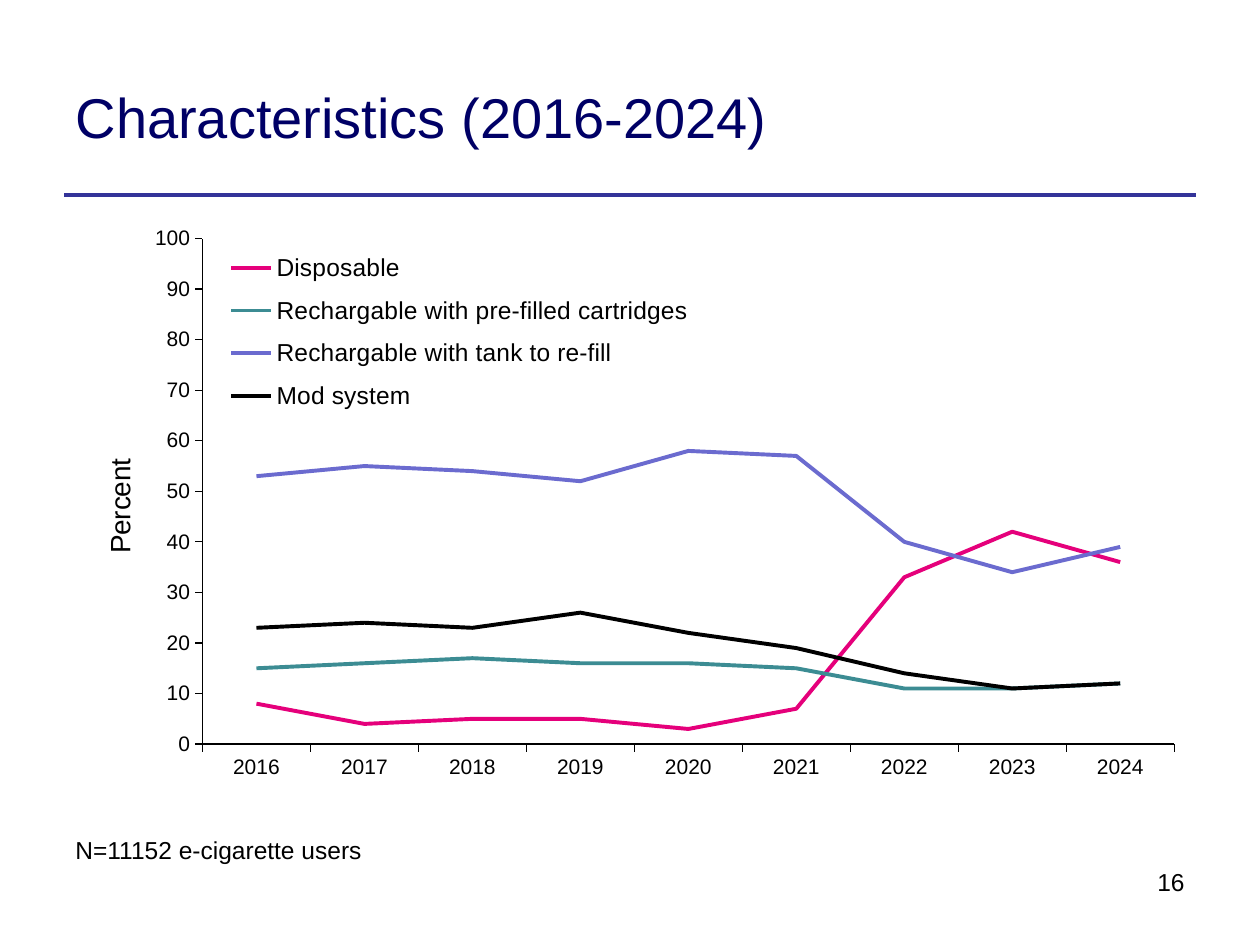
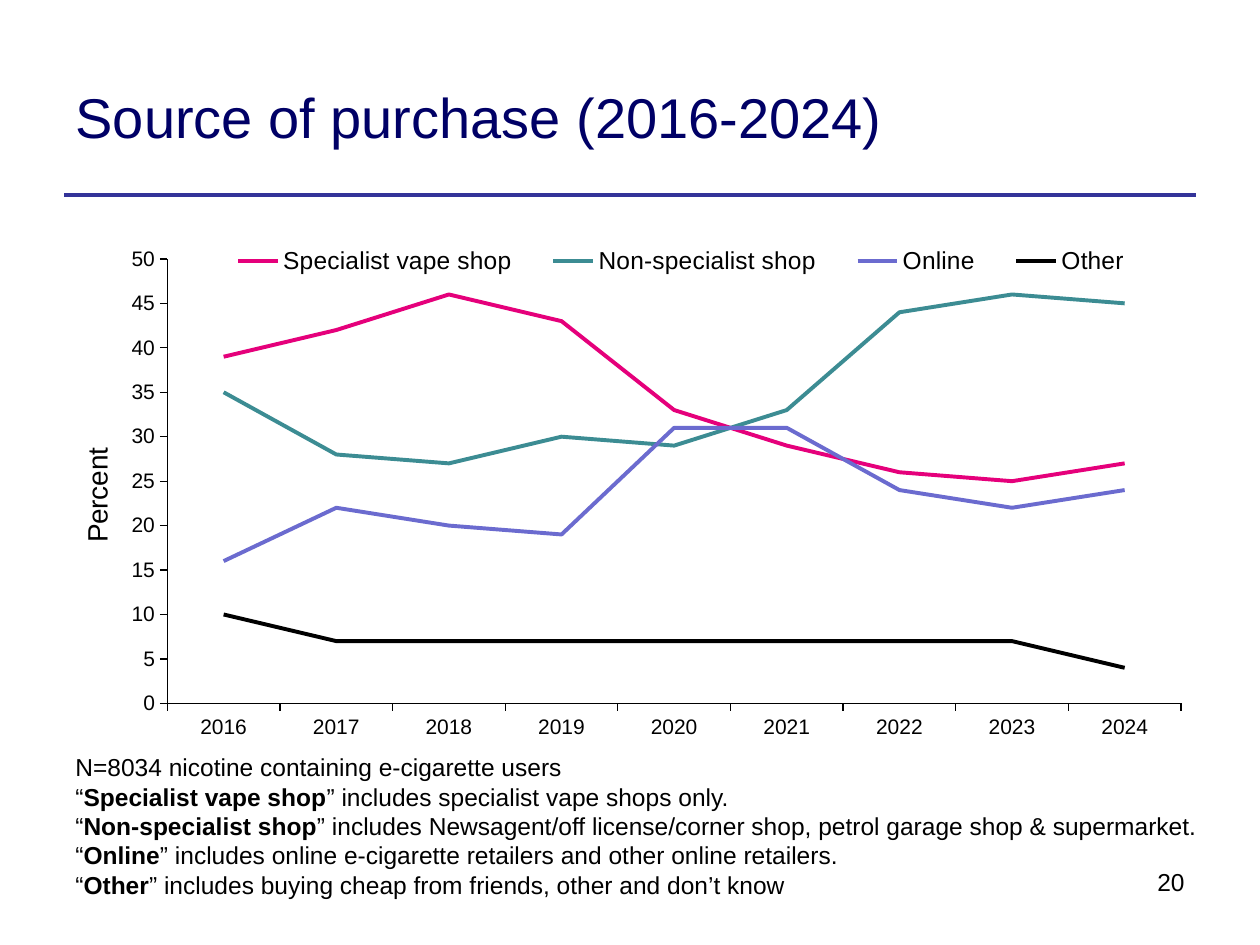
from lxml import etree
from pptx import Presentation
from pptx.chart.data import CategoryChartData
from pptx.dml.color import RGBColor
from pptx.enum.chart import XL_CHART_TYPE, XL_LEGEND_POSITION, XL_TICK_MARK
from pptx.enum.shapes import MSO_CONNECTOR
from pptx.enum.text import MSO_ANCHOR, PP_ALIGN
from pptx.oxml import parse_xml
from pptx.oxml.ns import nsdecls, qn
from pptx.util import Cm, Pt

FONT = "Arial"
NAVY = RGBColor(0x00, 0x00, 0x66)
INDIGO = RGBColor(0x33, 0x33, 0x99)
BLACK = RGBColor(0x00, 0x00, 0x00)
SERIES_COLORS = [RGBColor(0xE5, 0x00, 0x7B), RGBColor(0x3C, 0x8C, 0x93),
                 RGBColor(0x6B, 0x6B, 0xCF), BLACK]
YEARS = [str(year) for year in range(2016, 2025)]
LEFT = Cm(1.27)

SLIDES = [
    {
        "title": "Characteristics (2016-2024)",
        "number": "16",
        "chart_top": 4.37, "chart_height": 12.57, "maximum": 100, "step": 10,
        "plot": (0.123, 0.035, 0.857, 0.811),
        "legend": (0.14, 0.035, 0.42, 0.3),
        "axis_title": (0.03, 0.38),
        "series": {
            "Disposable": (8, 4, 5, 5, 3, 7, 33, 42, 36),
            "Rechargable with pre-filled cartridges": (15, 16, 17, 16, 16, 15, 11, 11, 12),
            "Rechargable with tank to re-fill": (53, 55, 54, 52, 58, 57, 40, 34, 39),
            "Mod system": (23, 24, 23, 26, 22, 19, 14, 11, 12),
        },
        "notes_box": (16.71, 21.62, 0.86),
        "sample": "N=11152 e-cigarette users",
        "definitions": [],
    },
    {
        "title": "Source of purchase (2016-2024)",
        "number": "20",
        "chart_top": 4.52, "chart_height": 11.3, "maximum": 50, "step": 5,
        "plot": (0.092, 0.062, 0.894, 0.793),
        "legend": (0.125, 0.03, 0.84, 0.07),
        "axis_title": (0.01, 0.39),
        "series": {
            "Specialist vape shop": (39, 42, 46, 43, 33, 29, 26, 25, 27),
            "Non-specialist shop": (35, 28, 27, 30, 29, 33, 44, 46, 45),
            "Online": (16, 22, 20, 19, 31, 31, 24, 22, 24),
            "Other": (10, 7, 7, 7, 7, 7, 7, 7, 4),
        },
        "notes_box": (15.04, 23.39, 3.25),
        "sample": "N=8034 nicotine containing e-cigarette users",
        "definitions": [
            ("Specialist vape shop", "includes specialist vape shops only."),
            ("Non-specialist shop",
             "includes Newsagent/off license/corner shop, petrol garage shop & supermarket."),
            ("Online", "includes online e-cigarette retailers and other online retailers."),
            ("Other", "includes buying cheap from friends, other and don’t know"),
        ],
    },
]


def style_font(font, size, color=BLACK):
    font.name = FONT
    font.size = Pt(size)
    font.color.rgb = color


def place(element, bounds, successors, inner=False):
    for old in element.findall(qn("c:layout")):
        element.remove(old)
    target = '<c:layoutTarget val="inner"/>' if inner else ""
    modes = '<c:xMode val="edge"/><c:yMode val="edge"/>'
    values = "".join(f'<c:{tag} val="{value}"/>' for tag, value in zip("xywh", bounds))
    layout = parse_xml(f'<c:layout {nsdecls("c")}><c:manualLayout>'
                       f"{target}{modes}{values}</c:manualLayout></c:layout>")
    following = [child for child in element if child.tag in map(qn, successors)]
    if following:
        following[0].addprevious(layout)
    else:
        element.append(layout)


prs = Presentation()
prs.slide_width = Cm(25.4)
prs.slide_height = Cm(19.05)

for content in SLIDES:
    slide = prs.slides.add_slide(prs.slide_layouts[5])

    rule = slide.shapes.add_connector(MSO_CONNECTOR.STRAIGHT, Cm(1.3), Cm(3.93), Cm(24.1), Cm(3.93))
    rule.line.color.rgb = INDIGO
    rule.line.width = Pt(2.25)
    etree.SubElement(rule._element.spPr, qn("a:effectLst"))

    title = slide.shapes.title
    title.left, title.top, title.width, title.height = LEFT, Cm(0.76), Cm(20.04), Cm(3.18)
    title.text_frame.text = content["title"]
    title.text_frame.vertical_anchor = MSO_ANCHOR.MIDDLE
    heading = title.text_frame.paragraphs[0]
    heading.alignment = PP_ALIGN.LEFT
    style_font(heading.font, 32, NAVY)

    data = CategoryChartData()
    data.categories = YEARS
    for name, values in content["series"].items():
        data.add_series(name, values)
    chart = slide.shapes.add_chart(
        XL_CHART_TYPE.LINE, LEFT, Cm(content["chart_top"]),
        Cm(22.86), Cm(content["chart_height"]), data).chart
    chart.has_title = False
    style_font(chart.font, 10)
    chart.plots[0].vary_by_categories = False
    for series, color in zip(chart.plots[0].series, SERIES_COLORS):
        series.smooth = False
        series.format.line.color.rgb = color
        series.format.line.width = Pt(2.25)
    place(chart._chartSpace.chart.plotArea, content["plot"], ["c:lineChart"], inner=True)

    for axis in (chart.category_axis, chart.value_axis):
        axis.has_major_gridlines = False
        axis.major_tick_mark = XL_TICK_MARK.OUTSIDE
        axis.minor_tick_mark = XL_TICK_MARK.NONE
        axis.format.line.color.rgb = BLACK
        axis.format.line.width = Pt(0.75)
        style_font(axis.tick_labels.font, 12)
    percent_axis = chart.value_axis
    percent_axis.minimum_scale = 0
    percent_axis.maximum_scale = content["maximum"]
    percent_axis.major_unit = content["step"]
    percent_title = percent_axis.axis_title
    percent_title.text_frame.text = "Percent"
    percent_label = percent_title.text_frame.paragraphs[0]
    style_font(percent_label.font, 16)
    percent_label.font.bold = False
    place(percent_title._element, content["axis_title"], ["c:overlay", "c:spPr", "c:txPr"])

    chart.has_legend = True
    chart.legend.position = XL_LEGEND_POSITION.BOTTOM
    chart.legend.include_in_layout = False
    style_font(chart.legend.font, 14)
    place(chart.legend._element, content["legend"], ["c:overlay", "c:spPr", "c:txPr"])

    page_number = slide.shapes.add_textbox(Cm(17.09), Cm(17.35), Cm(7.04), Cm(1.32)).text_frame
    page_number.word_wrap = True
    page_number.text = content["number"]
    page_number.paragraphs[0].alignment = PP_ALIGN.RIGHT
    style_font(page_number.paragraphs[0].font, 14)

    top, width, height = content["notes_box"]
    footnotes = slide.shapes.add_textbox(LEFT, Cm(top), Cm(width), Cm(height)).text_frame
    footnotes.word_wrap = True
    footnotes.text = content["sample"]
    for term, meaning in content["definitions"]:
        definition = footnotes.add_paragraph()
        for text, bold in (("“", False), (term, True), (f"” {meaning}", False)):
            run = definition.add_run()
            run.text = text
            run.font.bold = bold
    for paragraph in footnotes.paragraphs:
        style_font(paragraph.font, 14)

prs.save("out.pptx")
